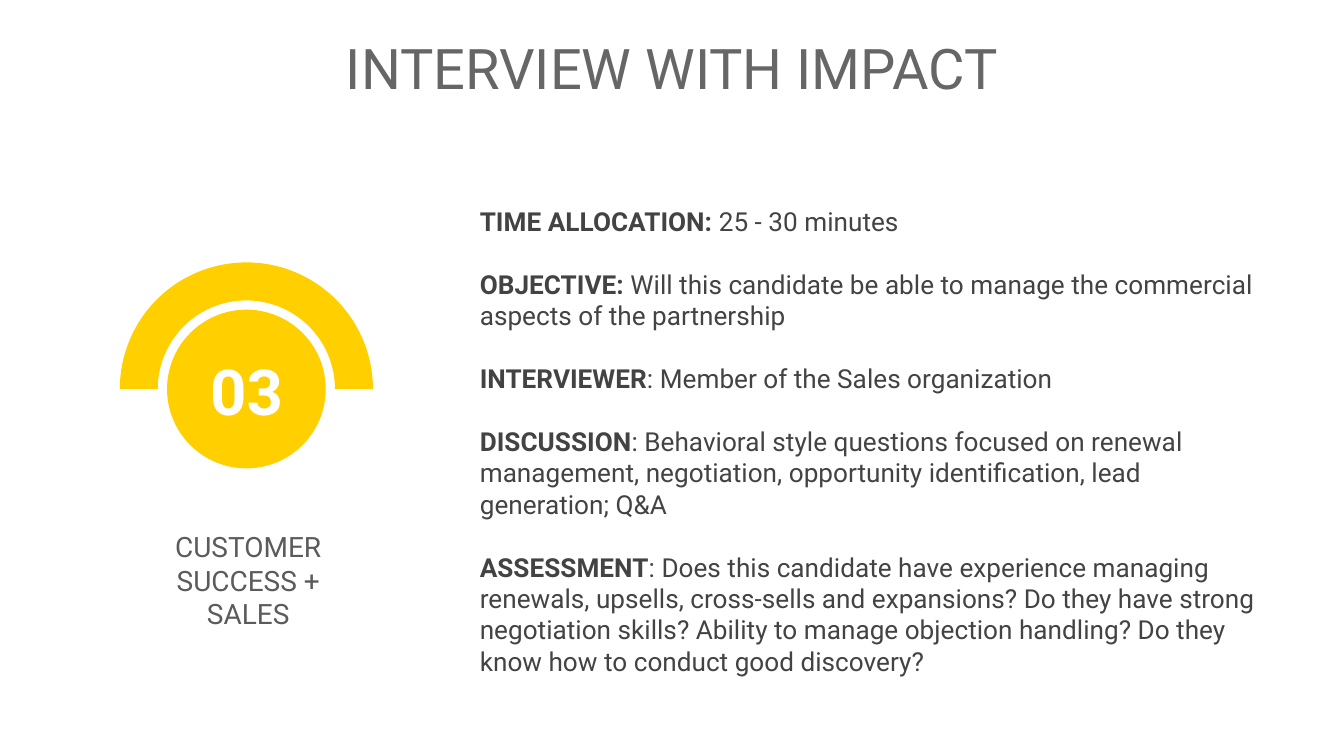
from dataclasses import dataclass

from pptx import Presentation
from pptx.dml.color import RGBColor
from pptx.enum.shapes import MSO_SHAPE
from pptx.enum.text import MSO_ANCHOR, PP_ALIGN
from pptx.util import Pt


@dataclass(frozen=True)
class Theme:
    font: str = "Roboto"
    accent: str = "FFCF00"
    title_color: str = "666666"
    label_color: str = "5B5B5B"
    body_color: str = "434343"
    number_color: str = "FFFFFF"
    title_size: float = 30
    label_size: float = 15
    body_size: float = 14
    number_size: float = 34


TIGHT = (2.88, 1.44)
ROOMY = (7.2, 7.2)

DETAILS = [
    ("TIME ALLOCATION:", " 25 - 30 minutes"),
    ("OBJECTIVE:", " Will this candidate be able to manage the commercial "
     "aspects of the partnership"),
    ("INTERVIEWER", ": Member of the Sales organization"),
    ("DISCUSSION", ": Behavioral style questions focused on renewal management, "
     "negotiation, opportunity identification, lead generation; Q&A"),
    ("ASSESSMENT", ": Does this candidate have experience managing renewals, "
     "upsells, cross-sells and expansions? Do they have strong negotiation "
     "skills? Ability to manage objection handling? Do they know how to "
     "conduct good discovery?"),
]


def apply_format(target, values):
    for name, value in values.items():
        setattr(target, name, value)


class SlideBuilder:
    def __init__(self, slide, theme):
        self.slide = slide
        self.theme = theme

    def round_shape(self, kind, center, diameter):
        left, top = (middle - diameter / 2 for middle in center)
        shape = self.slide.shapes.add_shape(
            kind, Pt(left), Pt(top), Pt(diameter), Pt(diameter))
        shape.shadow.inherit = False
        shape.fill.solid()
        shape.fill.fore_color.rgb = RGBColor.from_string(self.theme.accent)
        shape.line.fill.background()
        return shape

    def text(self, box, paragraphs, size, color, inset=ROOMY,
             anchor=MSO_ANCHOR.TOP, align=PP_ALIGN.CENTER, gap=0):
        """Add a text box; each paragraph is a list of (text, bold) runs."""
        frame = self.slide.shapes.add_textbox(*map(Pt, box)).text_frame
        across, down = map(Pt, inset)
        apply_format(frame, {
            "word_wrap": True, "vertical_anchor": anchor,
            "margin_left": across, "margin_right": across,
            "margin_top": down, "margin_bottom": down,
        })
        for index, runs in enumerate(paragraphs):
            paragraph = frame.add_paragraph() if index else frame.paragraphs[0]
            apply_format(paragraph, {
                "alignment": align, "space_before": Pt(gap if index else 0)})
            for words, bold in runs:
                run = paragraph.add_run()
                run.text = words
                apply_format(run.font, {
                    "name": self.theme.font, "size": Pt(size), "bold": bold})
                run.font.color.rgb = RGBColor.from_string(color)


def main():
    presentation = Presentation()
    apply_format(presentation, {"slide_width": Pt(720), "slide_height": Pt(405)})
    slide = presentation.slides.add_slide(presentation.slide_layouts[6])
    theme = Theme()
    builder = SlideBuilder(slide, theme)

    badge_center = (132, 208.4)
    builder.round_shape(MSO_SHAPE.OVAL, badge_center, 85)
    arc = builder.round_shape(MSO_SHAPE.BLOCK_ARC, badge_center, 135.6)
    arc.adjustments[2] = 0.15

    builder.text((88, 281.5, 90, 57.6),
                 [[("CUSTOMER", False)], [("SUCCESS + SALES", False)]],
                 theme.label_size, theme.label_color, TIGHT, MSO_ANCHOR.BOTTOM)
    builder.text((108, 187.2, 48.2, 44), [[("03", True)]],
                 theme.number_size, theme.number_color, TIGHT, MSO_ANCHOR.MIDDLE)
    builder.text((0, 10.8, 720, 51), [[("INTERVIEW WITH IMPACT", False)]],
                 theme.title_size, theme.title_color)
    builder.text((250, 103, 437, 286),
                 [[(heading, True), (detail, False)] for heading, detail in DETAILS],
                 theme.body_size, theme.body_color,
                 align=PP_ALIGN.LEFT, gap=16.8)

    presentation.save("out.pptx")


if __name__ == "__main__":
    main()
